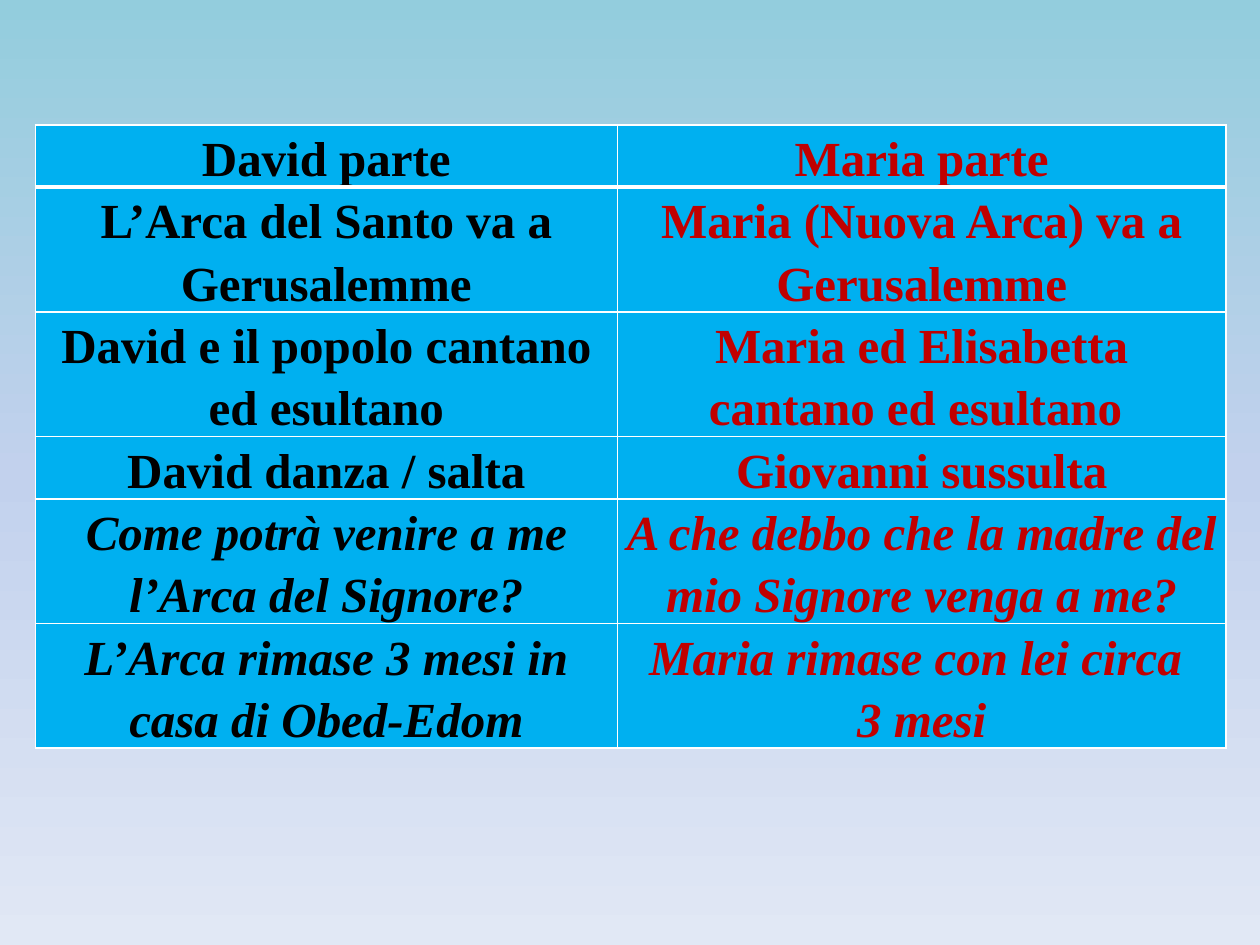
from pptx import Presentation
from pptx.dml.color import RGBColor as RGB
from pptx.enum.text import PP_ALIGN as Align
from pptx.oxml import parse_xml
from pptx.oxml.ns import nsdecls
from pptx.util import Inches, Pt

COLORS = {"david": "000000", "maria": "C00000", "cell": "00B0F0", "border": "FFFFFF"}
GRADIENT = {0: "93CDDD", 50: "C2D1ED", 100: "E1E8F5"}
FONT = {"name": "Times New Roman", "size": Pt(28), "bold": True}
MARGINS = {"margin_left": Inches(0.07), "margin_right": Inches(0.07),
           "margin_top": 0, "margin_bottom": 0}
COL_WIDTHS = [4.62, 4.83]
ROW_HEIGHT = 0.41
FIRST_QUOTE_ROW = 4
ROWS = [
    ("David parte", "Maria parte"),
    ("L’Arca del Santo va a Gerusalemme", "Maria (Nuova Arca) va a Gerusalemme"),
    ("David e il popolo cantano ed esultano", "Maria ed Elisabetta cantano ed esultano "),
    ("David danza / salta", "Giovanni sussulta"),
    ("Come potrà venire a me l’Arca del Signore?",
     "A che debbo che la madre del mio Signore venga a me?"),
    ("L’Arca rimase 3 mesi in casa di Obed-Edom", "Maria rimase con lei circa \n3 mesi"),
]


def set_attrs(obj, values):
    """Set each named attribute of an object."""
    for name, value in values.items():
        setattr(obj, name, value)


def set_background(s):
    """Give the slide a vertical gradient background."""
    stops = "".join(f'<a:gs pos="{pos * 1000}"><a:srgbClr val="{color}"/></a:gs>'
                    for pos, color in GRADIENT.items())
    s.element.cSld.insert(0, parse_xml(
        f'<p:bg {nsdecls("p", "a")}><p:bgPr><a:gradFill rotWithShape="1">'
        f'<a:gsLst>{stops}</a:gsLst><a:lin ang="5400000" scaled="0"/></a:gradFill>'
        '<a:effectLst/></p:bgPr></p:bg>'))


def set_borders(cell, row):
    """Draw thin cell borders, with a thick rule under the header."""
    widths = {"L": 1, "R": 1, "T": 3 if row == 1 else 1, "B": 3 if row == 0 else 1}
    tc_pr = cell._tc.get_or_add_tcPr()
    for i, (side, width) in enumerate(widths.items()):
        tc_pr.insert(i, parse_xml(
            f'<a:ln{side} {nsdecls("a")} w="{Pt(width)}"><a:solidFill>'
            f'<a:srgbClr val="{COLORS["border"]}"/></a:solidFill></a:ln{side}>'))


def fill_cell(cell, text, color, italic):
    """Write centred text in a filled cell."""
    set_attrs(cell, MARGINS)
    cell.fill.solid()
    cell.fill.fore_color.rgb = RGB.from_string(COLORS["cell"])
    cell.text_frame.text = text
    for p in cell.text_frame.paragraphs:
        set_attrs(p, {"alignment": Align.CENTER, "line_spacing": 1.15})
        for r in p.runs:
            set_attrs(r.font, {**FONT, "italic": italic})
            r.font.color.rgb = RGB.from_string(COLORS[color])


def add_comparison(s):
    """Add the table that compares David and Maria."""
    table = s.shapes.add_table(
        len(ROWS), len(COL_WIDTHS), Inches(0.28), Inches(0.99),
        Inches(sum(COL_WIDTHS)), Inches(ROW_HEIGHT * len(ROWS))).table
    for column, width in zip(table.columns, COL_WIDTHS):
        column.width = Inches(width)
    for i, texts in enumerate(ROWS):
        for j, (text, color) in enumerate(zip(texts, ("david", "maria"))):
            cell = table.cell(i, j)
            fill_cell(cell, text, color, i >= FIRST_QUOTE_ROW)
            set_borders(cell, i)


def main():
    """Build and save the slide."""
    prs = Presentation()
    set_attrs(prs, {"slide_width": Inches(10), "slide_height": Inches(7.5)})
    s = prs.slides.add_slide(prs.slide_layouts[6])
    set_background(s)
    add_comparison(s)
    prs.save("out.pptx")


if __name__ == "__main__":
    main()
